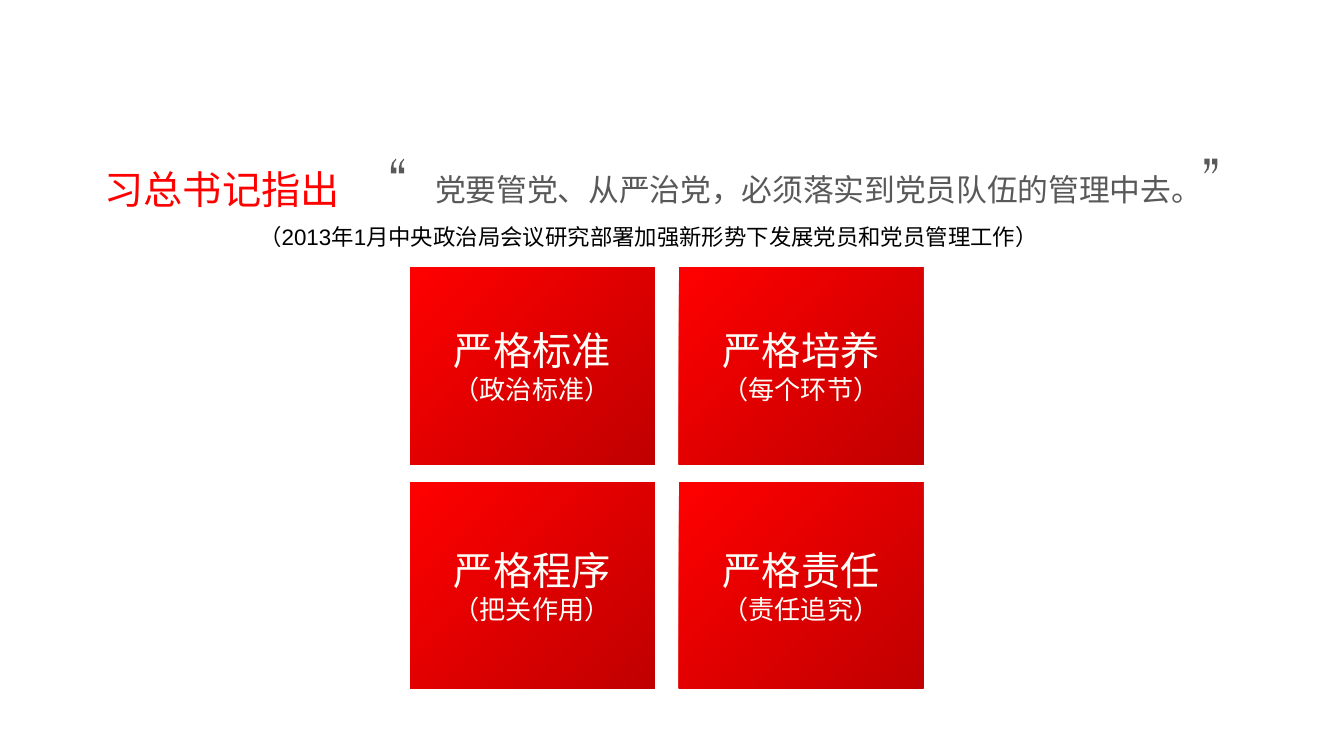
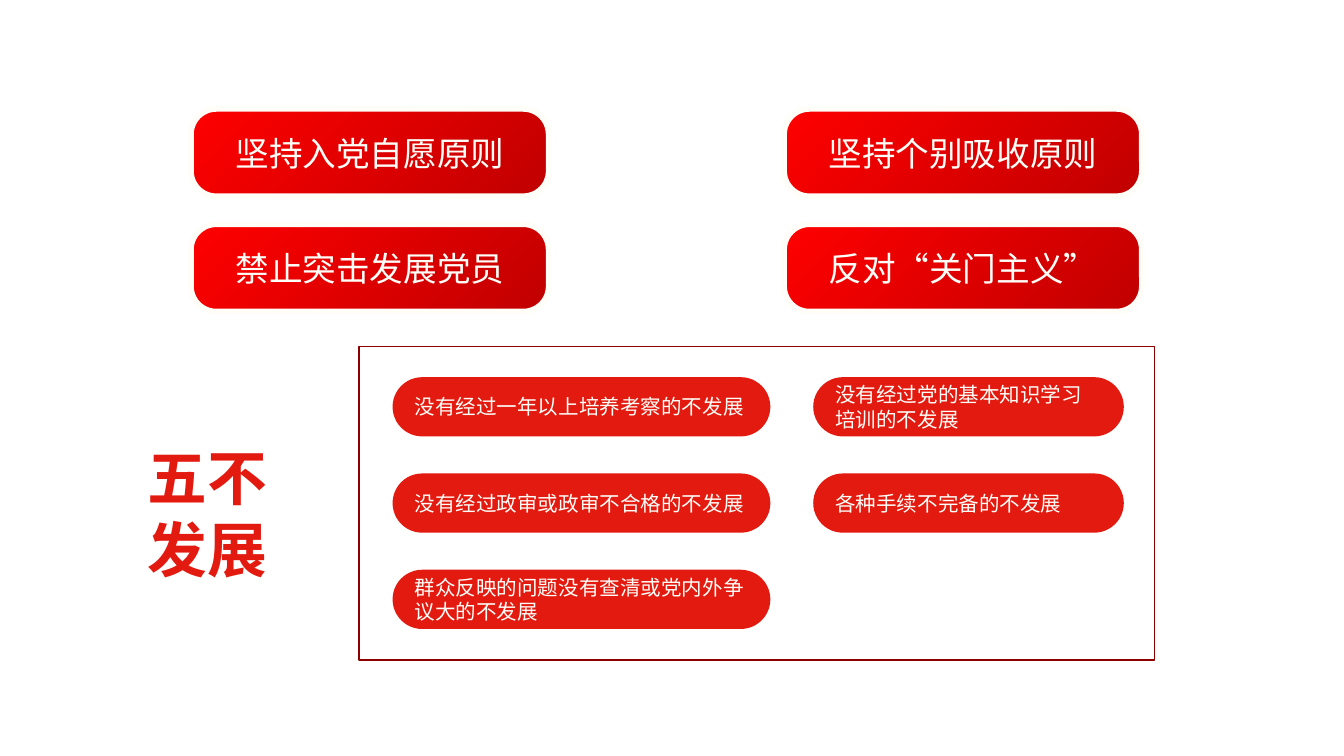
"""Build two slides on strict standards for admitting party members."""
from dataclasses import dataclass
from itertools import product

from lxml import etree
from pptx import Presentation
from pptx import util as u
from pptx.dml.color import RGBColor
from pptx.enum import shapes, text
from pptx.oxml.ns import qn


@dataclass(frozen=True)
class Theme:
    """Colours, fonts and type sizes shared by the slides."""
    bright: str = "FF0000"
    deep: str = "C00000"
    flat: str = "E31A10"
    frame: str = "8E0000"
    cream: str = "FFFDF8"
    grey: str = "595959"
    black: str = "000000"
    cjk: str = "Noto Sans CJK SC"
    latin: str = "Arial"
    lead: float = 21
    quote: float = 16.5
    source: float = 12
    detail: float = 14
    principle: float = 18
    rule: float = 11
    slogan: float = 32


THEME = Theme()
LEFT, CENTER = text.PP_ALIGN.LEFT, text.PP_ALIGN.CENTER
TOP, MIDDLE = text.MSO_ANCHOR.TOP, text.MSO_ANCHOR.MIDDLE
RECT = shapes.MSO_SHAPE.RECTANGLE
ROUNDED = shapes.MSO_SHAPE.ROUNDED_RECTANGLE

STRICT_CARDS = [
    ("严格标准", "（政治标准）"), ("严格培养", "（每个环节）"),
    ("严格程序", "（把关作用）"), ("严格责任", "（责任追究）"),
]
PRINCIPLES = ["坚持入党自愿原则", "坚持个别吸收原则", "禁止突击发展党员", "反对“关门主义”"]
RULE_COLUMNS = [
    (0.64, 7.14, ["没有经过一年以上培养考察的不发展",
                  "没有经过政审或政审不合格的不发展",
                  "群众反映的问题没有查清或党内外争议大的不发展"]),
    (8.59, 5.87, ["没有经过党的基本知识学习培训的不发展",
                  "各种手续不完备的不发展"]),
]
QUOTE_MARK = [(9, 0), (10, 2), (7, 6), (5, 10), (5, 17), (10, 17),
              (10, 28), (0, 28), (0, 17), (2, 8)]


def apply(target, values):
    """Set each named attribute of the target."""
    for name, value in values.items():
        setattr(target, name, value)


def cm_box(box):
    """Turn a box in centimetres into lengths."""
    return [u.Cm(side) for side in box]


def paint(fill, colour=None):
    """Fill with one colour, or with the red gradient when none is given."""
    if colour:
        fill.solid()
        fill.fore_color.rgb = RGBColor.from_string(colour)
        return
    fill.gradient()
    fill.gradient_angle = 315
    for stop, shade in zip(fill.gradient_stops, (THEME.bright, THEME.deep)):
        stop.color.rgb = RGBColor.from_string(shade)


def write(frame, lines, colour, align=CENTER, anchor=MIDDLE, face=THEME.cjk, bold=False):
    """Write (wording, size) lines into a text frame, one paragraph each."""
    apply(frame, {"word_wrap": True, "auto_size": text.MSO_AUTO_SIZE.NONE,
                  "vertical_anchor": anchor, "margin_left": u.Cm(0.25),
                  "margin_right": u.Cm(0.25), "margin_top": u.Cm(0.13),
                  "margin_bottom": u.Cm(0.13)})
    for index, (wording, size) in enumerate(lines):
        paragraph = frame.add_paragraph() if index else frame.paragraphs[0]
        paragraph.alignment = align
        run = paragraph.add_run()
        run.text = wording
        apply(run.font, {"size": u.Pt(size), "name": face, "bold": bold})
        paint(run.font.fill, colour)
        east_asian = etree.Element(qn("a:ea"), typeface=THEME.cjk)
        run.font._element.find(qn("a:latin")).addnext(east_asian)


def add_panel(slide, kind, box, colour=None, corner=None):
    """Add a shadowless, unlined filled shape."""
    panel = slide.shapes.add_shape(kind, *cm_box(box))
    panel.shadow.inherit = False
    panel.line.fill.background()
    paint(panel.fill, colour)
    if corner is not None:
        panel.adjustments[0] = corner
    return panel


def outline(panel, colour, points):
    """Give a shape a solid line."""
    panel.line.color.rgb = RGBColor.from_string(colour)
    panel.line.width = u.Pt(points)


def place_title(slide, box, lines, colour=None, **style):
    """Move the title placeholder to its box and write it."""
    heading = slide.shapes.title
    apply(heading, dict(zip(("left", "top", "width", "height"), cm_box(box))))
    write(heading.text_frame, lines, colour, anchor=TOP, **style)


def add_label(slide, box, wording, size, colour, **style):
    """Add one line of free-standing text."""
    label = slide.shapes.add_textbox(*cm_box(box))
    write(label.text_frame, [(wording, size)], colour, anchor=TOP, **style)


def add_quote_mark(slide, left, top, closing=False):
    """Draw a double quotation mark, turned half round when closing."""
    outline_points = [(10 - x, 28 - y) if closing else (x, y) for x, y in QUOTE_MARK]
    builder = None
    for shift in (0, 15):
        start, *rest = [(x + shift, y) for x, y in outline_points]
        if builder is None:
            builder = slide.shapes.build_freeform(*start, scale=u.Cm(0.01))
        else:
            builder.move_to(*start)
        builder.add_line_segments(rest, close=True)
    mark = builder.convert_to_shape(u.Cm(left), u.Cm(top))
    mark.shadow.inherit = False
    mark.line.fill.background()
    paint(mark.fill, THEME.grey)


def add_quotation(slide, box):
    """Place the quoted sentence between its marks, with its source below."""
    left, top, width, height = box
    add_label(slide, (left + 0.26, top + 0.1, width, height),
              "党要管党、从严治党，必须落实到党员队伍的管理中去。", THEME.quote, THEME.grey)
    add_quote_mark(slide, left, top)
    add_quote_mark(slide, left + 15.37, top, closing=True)
    add_label(slide, (left - 2.74, top + 1.09, 15.24, 0.76),
              "（2013年1月中央政治局会议研究部署加强新形势下发展党员和党员管理工作）",
              THEME.source, THEME.black, align=LEFT, face=THEME.latin)


def add_strict_cards(slide, box):
    """Lay the four requirements out in a two by two grid."""
    left, top, width, height = box
    card_width, pitch = 4.62, width - 4.62
    rows = [(top, 3.73), (top + 4.07, height - 4.07)]
    for ((card_top, card_height), column), (name, detail) in zip(
            product(rows, range(2)), STRICT_CARDS):
        card = add_panel(slide, RECT,
                         (left + column * pitch, card_top, card_width, card_height))
        write(card.text_frame, [(name, THEME.lead), (detail, THEME.detail)], THEME.cream)


def add_principles(slide, box):
    """Lay the four principles out in two rows at the sides of the box."""
    left, top, width, height = box
    bar_width, bar_height = 6.76, 1.65
    for (row, column), principle in zip(product(range(2), repeat=2), PRINCIPLES):
        bar = add_panel(slide, ROUNDED, (left + column * (width - bar_width),
                                         top + row * (height - bar_height),
                                         bar_width, bar_height), corner=0.29)
        outline(bar, THEME.cream, 3)
        write(bar.text_frame, [(principle, THEME.principle)], THEME.cream)


def add_rules(slide, box):
    """Frame the five rules, set in two columns of pills."""
    left, top, _, _ = box
    border = add_panel(slide, RECT, box)
    border.fill.background()
    outline(border, THEME.frame, 1)
    for offset, width, rules in RULE_COLUMNS:
        for row, rule in enumerate(rules):
            pill = add_panel(slide, ROUNDED,
                             (left + offset, top + 0.58 + row * 1.82, width, 1.12),
                             THEME.flat, corner=0.5)
            write(pill.text_frame, [(rule, THEME.rule)], THEME.cream, align=LEFT)


def build_quotation_slide(slide):
    """Compose the quotation and its four requirements."""
    place_title(slide, (1.57, 3, 5.26, 1.14), [("习总书记指出", THEME.lead)])
    add_quotation(slide, (7.39, 3, 15.65, 0.97))
    add_strict_cards(slide, (7.75, 5.05, 9.7, 7.96))


def build_rules_slide(slide):
    """Compose the four principles and the five rules."""
    place_title(slide, (2.54, 8.2, 3.05, 3),
                [("五不", THEME.slogan), ("发展", THEME.slogan)],
                THEME.flat, align=LEFT, bold=True)
    add_principles(slide, (3.61, 2.06, 17.97, 3.83))
    add_rules(slide, (6.78, 6.55, 15.04, 5.92))


def main():
    """Build and save the presentation."""
    deck = Presentation()
    apply(deck, {"slide_width": u.Cm(25.4), "slide_height": u.Cm(14.29)})
    for build in (build_quotation_slide, build_rules_slide):
        build(deck.slides.add_slide(deck.slide_layouts[5]))
    deck.save("out.pptx")


if __name__ == "__main__":
    main()
